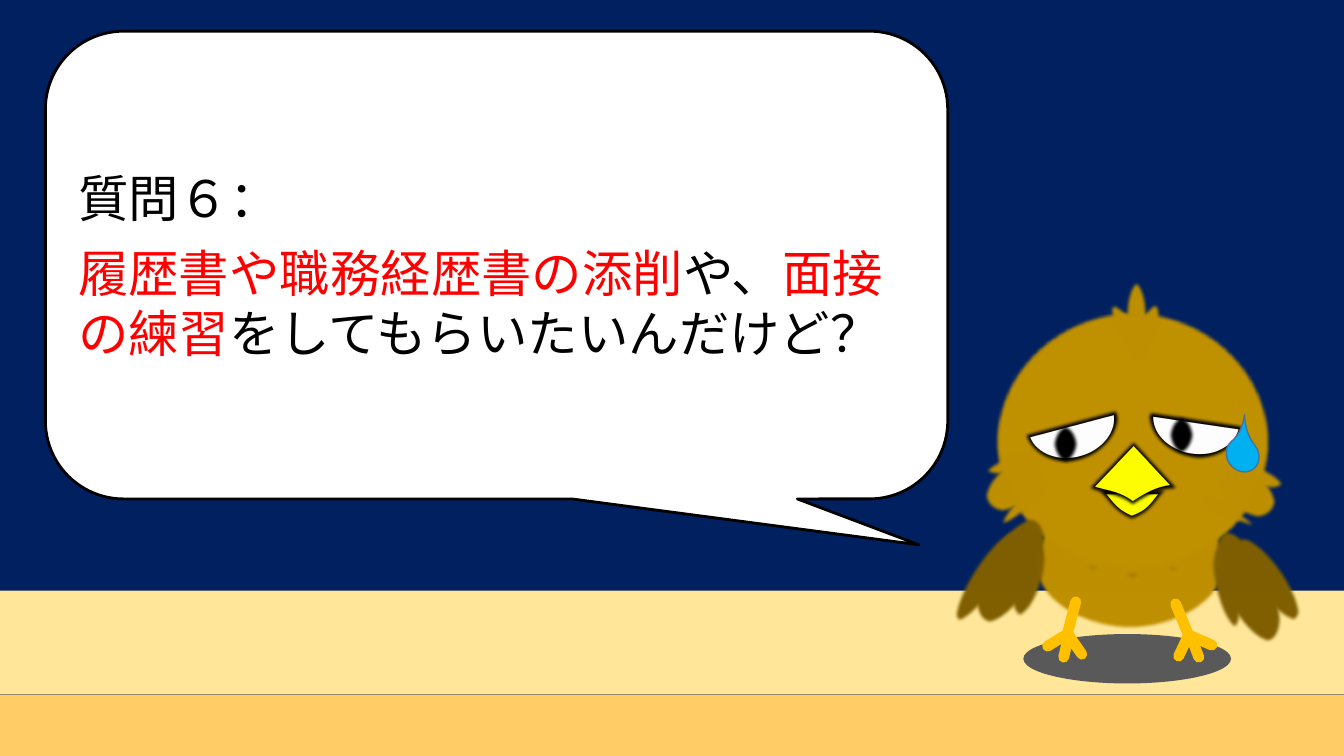
import dataclasses

import lxml.etree
import pptx
import pptx.dml.color
import pptx.enum.shapes
import pptx.enum.text
import pptx.oxml.ns
import pptx.util

Inches = pptx.util.Inches
Pt = pptx.util.Pt
Preset = pptx.enum.shapes.MSO_SHAPE
qn = pptx.oxml.ns.qn


@dataclasses.dataclass(frozen=True)
class Theme:
    night: str = "002060"
    table_top: str = "FFE699"
    table_edge: str = "FFCC66"
    ground: str = "595959"
    body: str = "BF9000"
    wing: str = "806000"
    leg: str = "FFC000"
    beak: str = "FFFF00"
    white: str = "FFFFFF"
    black: str = "000000"
    accent: str = "FF0000"
    sweat: str = "00B0F0"
    sweat_line: str = "43739E"
    font: str = "Noto Sans CJK JP"
    text_size: float = 36
    line_pitch: float = 43.5
    para_gap: float = 9.5
    thin: float = 1
    outline: float = 2
    face_line: float = 5
    leg_line: float = 7.75
    feather: float = 2.5


class Scene:
    """Draws styled elements on one slide."""

    def __init__(self, page, theme):
        self.page = page
        self.theme = theme
        page.background.fill.solid()
        page.background.fill.fore_color.rgb = self.color(theme.night)

    def color(self, code):
        return pptx.dml.color.RGBColor.from_string(code)

    def paint(self, shape, fill, line=None, width=0, soft=False):
        shape.shadow.inherit = False
        shape.fill.solid()
        shape.fill.fore_color.rgb = self.color(fill)
        if line:
            shape.line.color.rgb = self.color(line)
            shape.line.width = Pt(width)
        else:
            shape.line.fill.background()
        if soft:
            effects = shape._element.spPr.find(qn("a:effectLst"))
            edge = lxml.etree.SubElement(effects, qn("a:softEdge"))
            edge.set("rad", str(Pt(self.theme.feather)))

    def shape(self, preset, place, fill, turn=0, adjust=(), **style):
        shape = self.page.shapes.add_shape(preset, *map(Inches, place))
        shape.rotation = turn
        for index, value in enumerate(adjust):
            shape.adjustments[index] = value
        self.paint(shape, fill, **style)
        return shape

    def plumes(self, fill, plumes, preset=Preset.OVAL, adjust=()):
        for *place, turn in plumes:
            self.shape(preset, place, fill, turn, adjust, soft=True)

    def outline(self, start, steps, fill, **style):
        points, here = [], start
        for step in steps:
            points += bezier(here, *step) if len(step) == 3 else step
            here = step[-1]
        builder = self.page.shapes.build_freeform(*map(Inches, start))
        builder.add_line_segments([tuple(map(Inches, point)) for point in points])
        self.paint(builder.convert_to_shape(), fill, **style)

    def strokes(self, lines, color, width):
        for line in lines:
            stroke = self.page.shapes.add_connector(
                pptx.enum.shapes.MSO_CONNECTOR.STRAIGHT, *map(Inches, line))
            stroke.line.color.rgb = self.color(color)
            stroke.line.width = Pt(width)
            stroke.line._get_or_add_ln().set("cap", "rnd")
            lxml.etree.SubElement(stroke._element.spPr, qn("a:effectLst"))

    def text(self, shape, paragraphs):
        theme, frame = self.theme, shape.text_frame
        frame.word_wrap = True
        frame.vertical_anchor = pptx.enum.text.MSO_ANCHOR.MIDDLE
        for index, runs in enumerate(paragraphs):
            para = frame.add_paragraph() if index else frame.paragraphs[0]
            para.alignment = pptx.enum.text.PP_ALIGN.LEFT
            para.line_spacing = Pt(theme.line_pitch)
            para.space_before = Pt(theme.para_gap if index else 0)
            for words, color in runs:
                span = para.add_run()
                span.text = words
                span.font.size = Pt(theme.text_size)
                span.font.name = theme.font
                span.font.color.rgb = self.color(color)
                east_asian = lxml.etree.SubElement(span._r.get_or_add_rPr(), qn("a:ea"))
                east_asian.set("typeface", theme.font)


def bezier(start, first, second, end, count=12):
    curve = []
    for index in range(1, count + 1):
        t = index / count
        weights = ((1 - t) ** 3, 3 * t * (1 - t) ** 2, 3 * t * t * (1 - t), t ** 3)
        corners = (start, first, second, end)
        curve.append(tuple(sum(w * corner[axis] for w, corner in zip(weights, corners))
                           for axis in (0, 1)))
    return curve


def draw_setting(scene):
    theme = scene.theme
    scene.shape(Preset.RECTANGLE, (0, 5.86, 13.33, 1.03), theme.table_top)
    scene.shape(Preset.RECTANGLE, (0, 6.89, 13.33, 0.61), theme.table_edge)
    scene.shape(Preset.OVAL, (10.15, 6.29, 2.06, 0.49), theme.ground)
    bubble = scene.shape(Preset.ROUNDED_RECTANGULAR_CALLOUT, (0.45, 0.31, 8.95, 4.64),
                         theme.white, adjust=(0.468, 0.598, 0.167),
                         line=theme.black, width=theme.outline)
    scene.text(bubble, [
        [("質問６：", theme.black)],
        [("履歴書や職務経歴書の添削", theme.accent), ("や、", theme.black),
         ("面接の練習", theme.accent), ("をしてもらいたいんだけど？", theme.black)],
    ])


def draw_bird(scene):
    theme = scene.theme
    inked = dict(line=theme.black, width=theme.face_line, soft=True)
    scene.plumes(theme.body, [(10.24, 4.92, 1.93, 1.33, 0), (9.86, 3.08, 2.74, 2.6, 0)])
    scene.strokes([(10.67, 5.97, 10.58, 6.31), (10.57, 6.3, 10.39, 6.41),
                   (10.6, 6.3, 10.55, 6.52), (10.59, 6.29, 10.73, 6.49)],
                  theme.leg, theme.leg_line)
    scene.plumes(theme.body, [(9.82, 4.49, 0.45, 0.66, 231.7), (10.06, 4.65, 0.2, 0.66, 226.1),
                              (9.97, 4.27, 0.21, 0.66, 255.4)])
    scene.outline((11.56, 4.87), [
        ((11.45, 4.96), (11.44, 5.08), (11.22, 5.15)),
        ((11.02, 5.07), (11, 4.96), (10.89, 4.87)),
    ], theme.beak, **inked)
    scene.outline((10.8, 4.84), [
        [(11.24, 4.38)], [(11.67, 4.84)],
        ((11.52, 4.84), (11.39, 4.9), (11.23, 5.01)),
        ((11.09, 4.89), (10.94, 4.9), (10.8, 4.84)),
    ], theme.beak, **inked)
    scene.plumes(theme.body, [(12.31, 4.38, 0.24, 0.66, 108.6), (12.11, 4.75, 0.15, 0.66, 116),
                              (12.15, 4.55, 0.45, 0.66, 127.9)])
    scene.plumes(theme.wing, [(9.76, 5.08, 0.53, 1.17, 26.9), (9.62, 5.17, 0.32, 1.09, 32.2),
                              (10.04, 5.32, 0.32, 0.83, 14), (12.12, 5.21, 0.52, 1.22, 336.1),
                              (12.03, 5.39, 0.27, 0.87, 347.5), (12.41, 5.24, 0.36, 1.01, 325.3)])
    scene.strokes([(11.66, 5.99, 11.8, 6.33), (11.78, 6.32, 11.69, 6.51),
                   (11.81, 6.31, 11.89, 6.52), (11.79, 6.3, 12.02, 6.4)],
                  theme.leg, theme.leg_line)
    scene.plumes(theme.body, [(11.15, 2.77, 0.24, 0.64, 0), (11.08, 2.96, 0.24, 0.64, 326.5),
                              (11.24, 2.97, 0.24, 0.64, 21.4)])
    scene.plumes(theme.wing, [(10.73, 5.39, 0.16, 0.4, 280), (11.58, 5.4, 0.16, 0.4, 257.8),
                              (11.15, 5.47, 0.16, 0.4, 270)], Preset.MOON, (0.524,))
    for left, top, turn in [(11.5, 3.71, 278.9), (10.26, 3.74, 255.9)]:
        scene.shape(Preset.CHORD, (left, top, 0.73, 0.92), theme.white, turn,
                    (53.358, 162), **inked)
    scene.plumes(theme.black, [(10.43, 4.2, 0.28, 0.41, 0), (11.58, 4.11, 0.28, 0.41, 0)])
    scene.shape(Preset.TEAR, (12.17, 4.34, 0.31, 0.35), theme.sweat, 321.1, (1.707,),
                line=theme.sweat_line, width=theme.thin)


def main():
    deck = pptx.Presentation()
    deck.slide_width, deck.slide_height = Inches(13.33), Inches(7.5)
    scene = Scene(deck.slides.add_slide(deck.slide_layouts[6]), Theme())
    draw_setting(scene)
    draw_bird(scene)
    deck.save("out.pptx")


if __name__ == "__main__":
    main()
